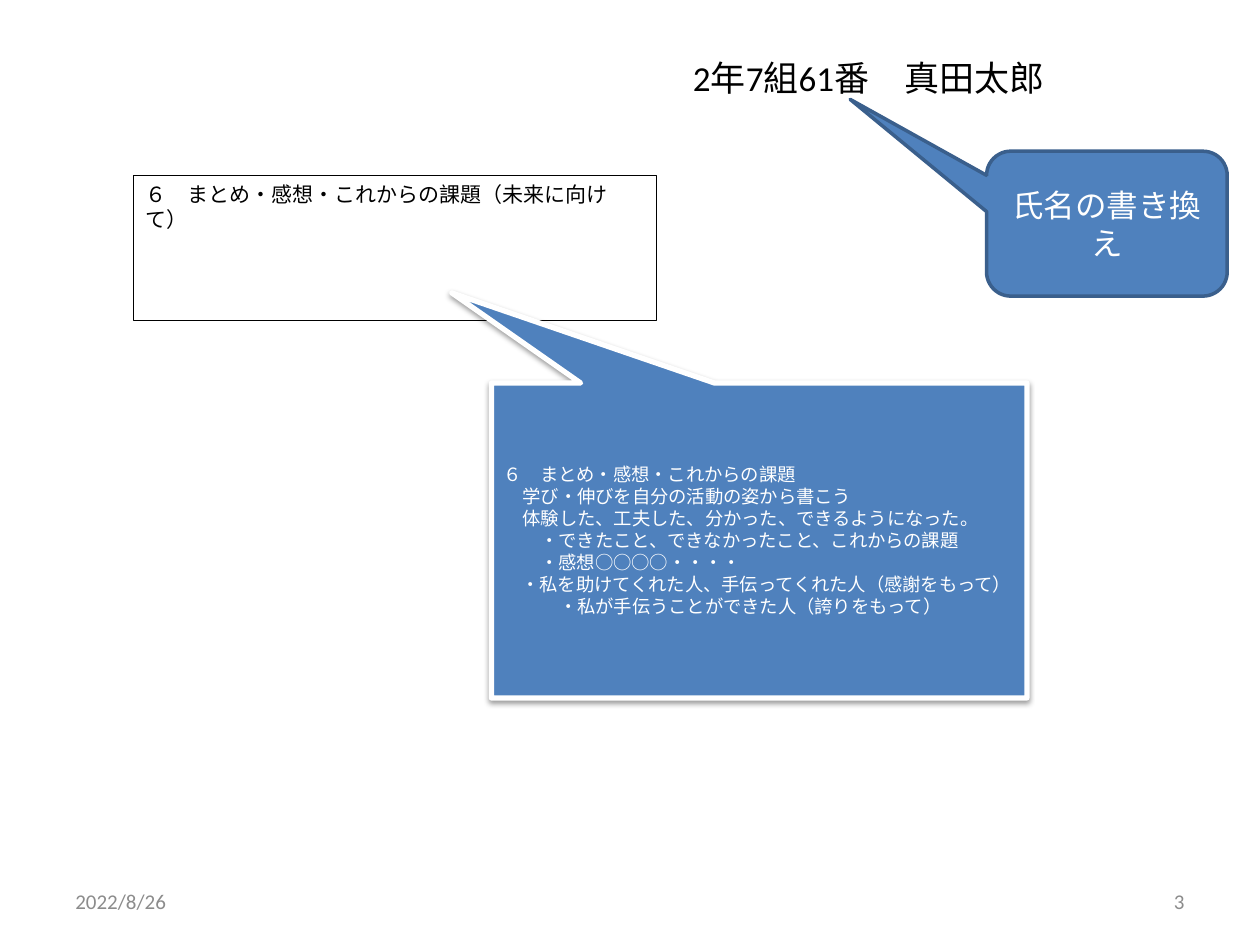
from lxml import etree
from pptx import Presentation
from pptx.dml.color import RGBColor
from pptx.enum.shapes import MSO_SHAPE
from pptx.enum.text import MSO_ANCHOR, PP_ALIGN
from pptx.oxml.ns import qn
from pptx.util import Inches, Pt

LEFT, CENTER, RIGHT = PP_ALIGN.LEFT, PP_ALIGN.CENTER, PP_ALIGN.RIGHT
TOP, MIDDLE = MSO_ANCHOR.TOP, MSO_ANCHOR.MIDDLE
RECT = MSO_SHAPE.RECTANGLE
RECT_CALLOUT = MSO_SHAPE.RECTANGULAR_CALLOUT
ROUND_CALLOUT = MSO_SHAPE.ROUNDED_RECTANGULAR_CALLOUT

BLACK = RGBColor(0x00, 0x00, 0x00)
WHITE = RGBColor(0xFF, 0xFF, 0xFF)
BLUE = RGBColor(0x4F, 0x81, 0xBD)
DARK_BLUE = RGBColor(0x3A, 0x5F, 0x8C)
GRAY = RGBColor(0x8C, 0x8C, 0x8C)
FONT = "Calibri"

ADVICE = [
    ("６　まとめ・感想・これからの課題", 0, 0),
    ("学び・伸びを自分の活動の姿から書こう", 0, 0.15),
    ("体験した、工夫した、分かった、できるようになった。", 0.15, 0),
    ("・できたこと、できなかったこと、これからの課題", 0, 0.29),
    ("・感想○○○○・・・・", 0, 0.29),
    ("・私を助けてくれた人、手伝ってくれた人（感謝をもって）", 0.29, -0.15),
    ("・私が手伝うことができた人（誇りをもって）", 0, 0.44),
]


def write(sp, text, size, color, align=LEFT, anchor=MIDDLE):
    """Set the text of a shape and format all its paragraphs."""
    tf = sp.text_frame
    tf.text = text
    tf.word_wrap = True
    tf.vertical_anchor = anchor
    for p in tf.paragraphs:
        p.alignment = align
        for r in p.runs:
            r.font.name = FONT
            r.font.size = Pt(size)
            r.font.color.rgb = color


def add_box(s, kind, box, fill, line, width, adjustments=()):
    """Add a filled, outlined shape without a shadow."""
    sp = s.shapes.add_shape(kind, *map(Inches, box))
    sp.shadow.inherit = False
    sp.fill.solid()
    sp.fill.fore_color.rgb = fill
    sp.line.color.rgb = line
    sp.line.width = Pt(width)
    for i, value in enumerate(adjustments):
        sp.adjustments[i] = value
    return sp


def add_shadow(sp):
    """Give a shape a soft shadow falling straight down."""
    effects = sp._element.spPr.find(qn("a:effectLst"))
    shadow = etree.SubElement(
        effects, qn("a:outerShdw"), blurRad=str(Pt(3.1)), dist=str(Pt(1.6)),
        dir="5400000", rotWithShape="0")
    color = etree.SubElement(shadow, qn("a:srgbClr"), val=str(BLACK))
    etree.SubElement(color, qn("a:alpha"), val="38000")


def place_title(s, box):
    """Place the class and name in the title placeholder."""
    title = s.shapes.title
    title.left, title.top, title.width, title.height = map(Inches, box)
    write(title, "2年7組61番　真田太郎", 20, BLACK, CENTER)


def add_summary(s, box):
    """Add the outlined summary field."""
    sp = add_box(s, RECT, box, WHITE, BLACK, 0.25)
    write(sp, "６　まとめ・感想・これからの課題（未来に向けて）", 12, BLACK, anchor=TOP)


def add_advice(s, box):
    """Add the callout with indented writing advice."""
    sp = add_box(s, RECT_CALLOUT, box, BLUE, WHITE, 3, (-0.574, -0.786))
    add_shadow(sp)
    write(sp, "\n".join(text for text, _, _ in ADVICE), 10.5, WHITE)
    for p, (_, margin, indent) in zip(sp.text_frame.paragraphs, ADVICE):
        pPr = p._p.get_or_add_pPr()
        pPr.set("marL", str(Inches(margin)))
        pPr.set("indent", str(Inches(indent)))


def add_name_hint(s, box):
    """Add the rounded callout pointing to the name."""
    sp = add_box(s, ROUND_CALLOUT, box, BLUE, DARK_BLUE, 2, (-1.067, -0.858, 0.167))
    write(sp, "氏名の書き換え", 18, WHITE, CENTER)


def add_footer(s, box):
    """Add the date and slide number at the two ends of the box."""
    left, top, width, height = box
    part = 2.33
    for text, x, align in (("2022/8/26", left, LEFT), ("3", left + width - part, RIGHT)):
        sp = s.shapes.add_textbox(*map(Inches, (x, top, part, height)))
        write(sp, text, 12, GRAY, align)


def main():
    """Build and save the slide."""
    prs = Presentation()
    prs.slide_width, prs.slide_height = Inches(10), Inches(7.5)
    s = prs.slides.add_slide(prs.slide_layouts[5])
    add_footer(s, (0.5, 6.95, 9, 0.4))
    add_summary(s, (1.06, 1.39, 4.15, 1.15))
    add_advice(s, (3.9, 3.04, 4.25, 2.5))
    place_title(s, (4.84, 0.31, 4.11, 0.61))
    add_name_hint(s, (7.83, 1.2, 1.91, 1.15))
    prs.save("out.pptx")


if __name__ == "__main__":
    main()
